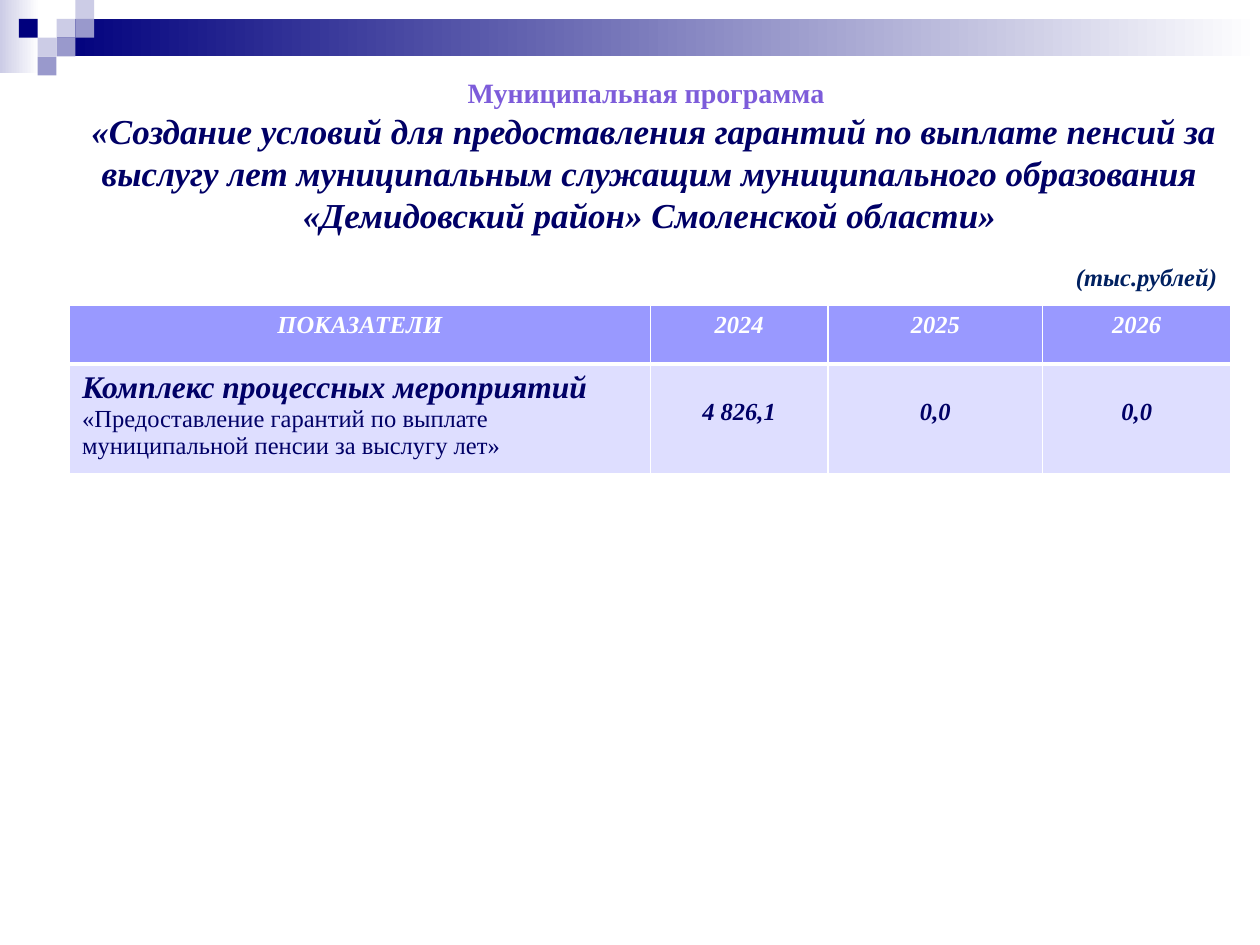
from pptx import Presentation
from pptx.dml.color import RGBColor
from pptx.enum.shapes import MSO_SHAPE as Shape
from pptx.enum.text import PP_ALIGN as Align
from pptx.oxml import parse_xml
from pptx.oxml.ns import nsdecls
from pptx.util import Cm, Pt

WHITE = RGBColor(0xFF, 0xFF, 0xFF)
NAVY = RGBColor(0x00, 0x00, 0x7D)
INK = RGBColor(0x00, 0x00, 0x66)
DEEP = RGBColor(0x00, 0x20, 0x60)
VIOLET = RGBColor(0x7D, 0x5C, 0xDA)
PALE = RGBColor(0xCC, 0xCC, 0xE6)
MID = RGBColor(0x99, 0x99, 0xCC)
HEAD = RGBColor(0x99, 0x99, 0xFF)
BODY = RGBColor(0xDE, 0xDE, 0xFF)
FONT = "Times New Roman"


def write(par, text, size=14, color=INK, bold=True, italic=True, align=Align.CENTER):
    """Add a formatted run to a paragraph."""
    par.alignment = align
    run = par.add_run()
    run.text = text
    font = run.font
    font.name, font.size = FONT, Pt(size)
    font.bold, font.italic = bold, italic
    font.color.rgb = color


def block(slide, x, y, w, h, color, fade=False):
    """Draw a plain rectangle, or one that fades to white."""
    shape = slide.shapes.add_shape(Shape.RECTANGLE, Cm(x), Cm(y), Cm(w), Cm(h))
    shape.shadow.inherit = False
    shape.line.fill.background()
    if fade:
        shape.fill.gradient()
        shape.fill.gradient_angle = 0
        for stop, tone in zip(shape.fill.gradient_stops, (color, WHITE)):
            stop.color.rgb = tone
    else:
        shape.fill.solid()
        shape.fill.fore_color.rgb = color


def banner(slide, x, y, w):
    """Draw the fading bars and the mosaic of squares."""
    unit = 0.38
    block(slide, x, y, 0.79, 1.47, PALE, fade=True)
    block(slide, x + 3 * unit, y + unit, w - 3 * unit, 2 * unit, NAVY, fade=True)
    tiles = [(3, 1, PALE), (4, 0, PALE), (4, 1, MID), (2, 2, PALE),
             (1, 1, NAVY), (3, 2, MID), (2, 3, MID)]
    for col, row, color in tiles:
        block(slide, x + col * unit, y + row * unit, unit, unit, color)


def label(slide, x, y, w, h, wrap=True):
    """Add an empty text box and return its frame."""
    frame = slide.shapes.add_textbox(Cm(x), Cm(y), Cm(w), Cm(h)).text_frame
    frame.word_wrap = wrap
    return frame


def title(slide, x, y, w, h):
    """Write the programme heading."""
    frame = label(slide, x, y, w, h)
    write(frame.paragraphs[0], "Муниципальная программа ", size=16, color=VIOLET, italic=False)
    write(frame.add_paragraph(),
          " «Создание условий для предоставления гарантий по выплате пенсий за выслугу лет "
          "муниципальным служащим муниципального образования «Демидовский район» "
          "Смоленской области»", size=20)


def units(slide, x, y, w, h):
    """Write the unit of measure."""
    frame = label(slide, x, y, w, h, wrap=False)
    write(frame.paragraphs[0], "(тыс.рублей)", color=DEEP, align=Align.LEFT)


def edge(cell, base):
    """Give a cell white borders, with the bottom one of the given width."""
    props = cell._tc.get_or_add_tcPr()
    widths = {"lnL": 1, "lnR": 1, "lnT": 1, "lnB": base}
    for place, (side, width) in enumerate(widths.items()):
        props.insert(place, parse_xml(
            f'<a:{side} {nsdecls("a")} w="{Pt(width)}"><a:solidFill>'
            f'<a:srgbClr val="{WHITE}"/></a:solidFill></a:{side}>'))


def budget(slide, x, y, w, h):
    """Build the table of amounts by year."""
    grid = slide.shapes.add_table(2, 4, Cm(x), Cm(y), Cm(w), Cm(h)).table
    parts = (0.5, 0.153, 0.185, 0.162)
    for col, part in zip(grid.columns, parts):
        col.width = Cm(round(w * part, 2))
    top = 1.19
    grid.rows[0].height, grid.rows[1].height = Cm(top), Cm(h - top)
    heads = ("ПОКАЗАТЕЛИ", "2024", "2025", "2026")
    sums = ("", "4 826,1", "0,0", "0,0")
    for row, (texts, fill, color, base) in enumerate(
            [(heads, HEAD, WHITE, 3), (sums, BODY, INK, 1)]):
        for col, text in enumerate(texts):
            cell = grid.cell(row, col)
            cell.fill.solid()
            cell.fill.fore_color.rgb = fill
            edge(cell, base)
            if text:
                write(cell.text_frame.paragraphs[0], text, color=color)
            if row and col:
                cell.margin_top = Cm(0.69)
    par = grid.cell(1, 0).text_frame.paragraphs[0]
    write(par, "Комплекс процессных мероприятий ", size=18, align=Align.LEFT)
    write(par, "«Предоставление гарантий по выплате муниципальной пенсии за выслугу лет»",
          bold=False, italic=False, align=Align.LEFT)


def main():
    """Build and save the slide."""
    deck = Presentation()
    deck.slide_width, deck.slide_height = Cm(25.4), Cm(19.05)
    slide = deck.slides.add_slide(deck.slide_layouts[6])
    banner(slide, 0, 0, 25.4)
    title(slide, 0.79, 1.4, 24.61, 3.5)
    budget(slide, 1.4, 6.15, 23.42, 3.37)
    units(slide, 21.44, 5.16, 3.38, 0.86)
    deck.save("out.pptx")


if __name__ == "__main__":
    main()
